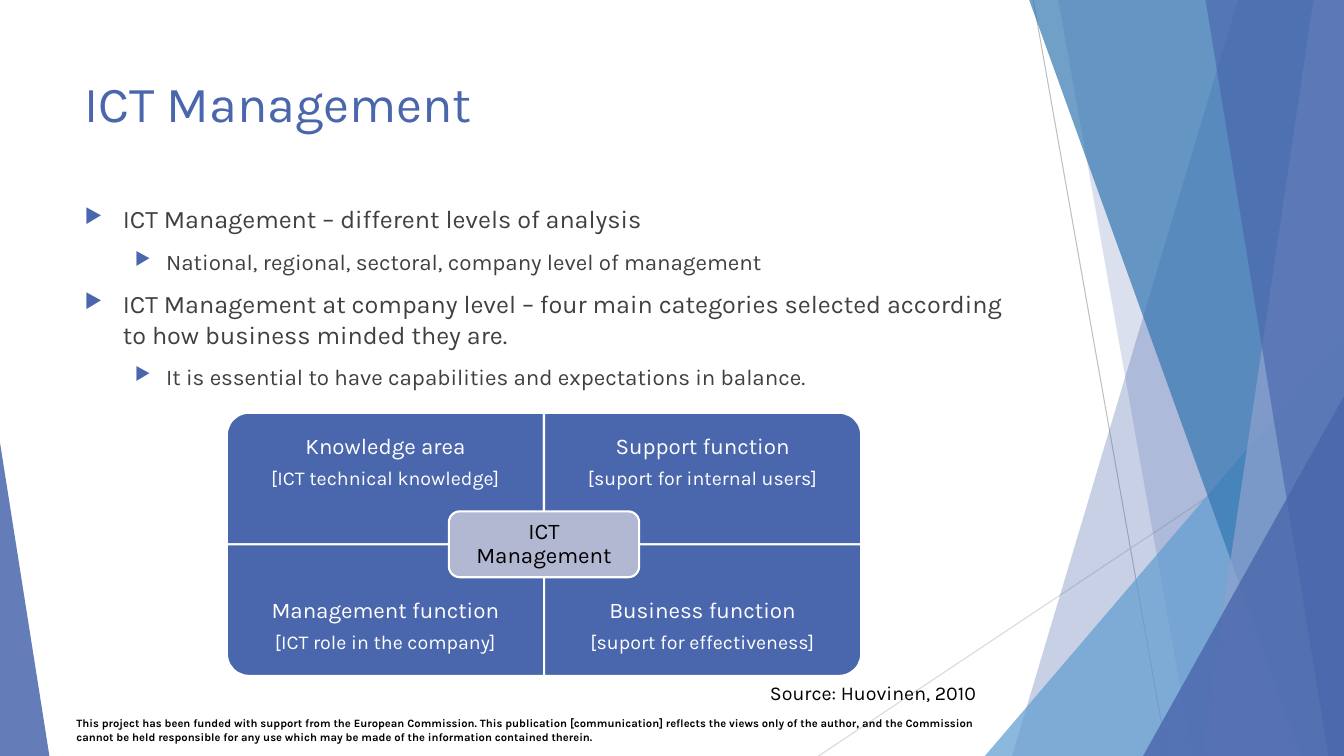
from lxml import etree
from pptx import Presentation
from pptx.dml.color import RGBColor
from pptx.enum.shapes import MSO_CONNECTOR, MSO_SHAPE
from pptx.enum.text import MSO_ANCHOR, PP_ALIGN
from pptx.oxml.ns import qn
from pptx.util import Inches, Pt

WIDE, HIGH = Inches(13.333), Inches(7.5)
FONT = "Karla"
LINE = MSO_CONNECTOR.STRAIGHT
WEDGE = MSO_SHAPE.ISOSCELES_TRIANGLE
ROUND = MSO_SHAPE.ROUNDED_RECTANGLE
CORNER = MSO_SHAPE.ROUND_1_RECTANGLE
TOP, MIDDLE = MSO_ANCHOR.TOP, MSO_ANCHOR.MIDDLE
LEFT, CENTER = PP_ALIGN.LEFT, PP_ALIGN.CENTER

HUES = {
    "blue": "4A66AC", "sky": "629DD1", "deep": "3477B2", "pale": "90A2CF",
    "hub": "B2B8D2", "white": "FFFFFF", "black": "000000", "text": "404040",
    "gray": "BFBFBF", "mist": "D9D9D9",
}

# Left, top, width and height of a quadrant, in percent of the slide
QUAD_X, QUAD_Y, QUAD_W, QUAD_H = 16.88, 54.6, 23.6, 17.4
LABEL_H = 13.05
QUADS = [  # column, row, turn, name, detail
    (0, 0, 270, "Knowledge area", "[ICT technical knowledge]"),
    (1, 0, 0, "Support function", "[suport for internal users]"),
    (0, 1, 180, "Management function", "[ICT role in the company]"),
    (1, 1, 90, "Business function", "[suport for effectiveness]"),
]
POINTS = [  # level, text
    (0, "ICT Management – different levels of analysis"),
    (1, "National, regional, sectoral, company level of management"),
    (0, "ICT Management at company level – four main categories selected "
        "according to how business minded they are."),
    (1, "It is essential to have capabilities and expectations in balance."),
]
LEVELS = [(18, 0.38, 0.38), (16, 0.81, 0.31)]  # size, margin, hang
NOTE = ("This project has been funded with support from the European "
        "Commission. This publication [communication] reflects the views only "
        "of the author, and the Commission cannot be held responsible for any "
        "use which may be made of the information contained therein.")


def hue(name):
    return RGBColor.from_string(HUES[name])


def across(share):
    return round(WIDE * share / 100)


def down(share):
    return round(HIGH * share / 100)


def place(x, y, w, h):
    return across(x), down(y), across(w), down(h)


def paint(shape, fill, alpha=100, edge=None):
    shape.shadow.inherit = False
    shape.fill.solid()
    shape.fill.fore_color.rgb = hue(fill)
    if alpha < 100:
        color = shape.element.spPr.find(".//" + qn("a:srgbClr"))
        etree.SubElement(color, qn("a:alpha"), val=str(alpha * 1000))
    if edge:
        shape.line.color.rgb = hue(edge)
        shape.line.width = Pt(1.5)
    else:
        shape.line.fill.background()


def rule(slide, start, end, color):
    line = slide.shapes.add_connector(
        LINE, across(start[0]), down(start[1]), across(end[0]), down(end[1]))
    line.line.color.rgb = hue(color)
    line.line.width = Pt(0.75)
    etree.SubElement(line.element.spPr, qn("a:effectLst"))


def slab(slide, top, base, color, alpha):
    """Full-height band from a slanted left side to the slide's right edge."""
    pen = slide.shapes.build_freeform(across(top), 0, scale=1.0)
    pen.add_line_segments([(WIDE, 0), (WIDE, HIGH), (across(base), HIGH)])
    paint(pen.convert_to_shape(), color, alpha)


def wedge(slide, x, y, w, tip, color, alpha):
    """Triangle standing on the slide's bottom; tip is 0 left to 1 right."""
    shape = slide.shapes.add_shape(WEDGE, *place(x, y, w, 100 - y))
    shape.adjustments[0] = tip
    paint(shape, color, alpha)


def bullet(para, margin, hang):
    props = para._p.get_or_add_pPr()
    props.set("marL", str(Inches(margin)))
    props.set("indent", str(-Inches(hang)))
    color = etree.SubElement(props, qn("a:buClr"))
    etree.SubElement(color, qn("a:srgbClr"), val=HUES["blue"])
    etree.SubElement(props, qn("a:buSzPct"), val="80000")
    etree.SubElement(props, qn("a:buChar"), char="▶")


def style(para, text, size=16, color="black", bold=False, align=LEFT,
          before=0, after=0, lead=None):
    para.text = text
    para.alignment = align
    para.space_before, para.space_after = Pt(before), Pt(after)
    if lead:
        para.line_spacing = lead
    font = para.font
    font.name, font.size, font.bold = FONT, Pt(size), bold
    font.color.rgb = hue(color)


def setup(frame, anchor=TOP, pad=None):
    frame.word_wrap = True
    frame.vertical_anchor = anchor
    if pad is not None:
        frame.margin_left = frame.margin_right = Inches(pad)
        frame.margin_top = frame.margin_bottom = Inches(pad)
    return frame


def box(slide, area, **look):
    return setup(slide.shapes.add_textbox(*place(*area)).text_frame, **look)


def label(slide, area, text, **look):
    style(box(slide, area).paragraphs[0], text, **look)


def add(frame, first):
    return frame.paragraphs[0] if first else frame.add_paragraph()


def outline(slide, area):
    frame = box(slide, area)
    for i, (level, text) in enumerate(POINTS):
        size, margin, hang = LEVELS[level]
        para = add(frame, i == 0)
        para.level = level
        bullet(para, margin, hang)
        style(para, text, size=size, color="text", before=10 if i else 0)


def quad(slide, col, row, turn, name, detail):
    """Quarter whose rounded corner is turned to face outward."""
    x, y = QUAD_X + col * QUAD_W, QUAD_Y + row * QUAD_H
    left, top, w, h = place(x, y, QUAD_W, QUAD_H)
    if turn % 180:
        left, top, w, h = left + (w - h) // 2, top + (h - w) // 2, h, w
    shape = slide.shapes.add_shape(CORNER, left, top, w, h)
    shape.rotation = turn
    paint(shape, "blue", edge="white")
    y += row * (QUAD_H - LABEL_H)
    frame = box(slide, (x, y, QUAD_W, LABEL_H), anchor=MIDDLE, pad=0.12)
    for i, (text, size) in enumerate([(name, 16), (detail, 14)]):
        style(add(frame, i == 0), text, size=size, color="white",
              align=CENTER, after=6.5, lead=0.9)


def hub(slide, w, h, text):
    area = QUAD_X + QUAD_W - w / 2, QUAD_Y + QUAD_H - h / 2, w, h
    shape = slide.shapes.add_shape(ROUND, *place(*area))
    paint(shape, "hub", edge="white")
    frame = setup(shape.text_frame, anchor=MIDDLE, pad=0.07)
    style(frame.paragraphs[0], text, align=CENTER, lead=0.9)


def decor(slide):
    rule(slide, (76.88, 0), (86.85, 100), "gray")
    rule(slide, (100, 53.73), (60.9, 100), "mist")
    slab(slide, 92.1, 75.3, "blue", 30)
    slab(slide, 78.75, 88.73, "blue", 20)
    wedge(slide, 73.28, 44.4, 26.72, 1, "sky", 72)
    slab(slide, 76.58, 96.83, "deep", 70)
    slab(slide, 97.73, 89.4, "pale", 70)
    slab(slide, 89.7, 98.85, "blue", 65)
    wedge(slide, 85.05, 52.4, 14.95, 1, "blue", 80)
    wedge(slide, 0, 58.53, 3.68, 0, "blue", 85)


def main():
    deck = Presentation()
    deck.slide_width, deck.slide_height = WIDE, HIGH
    slide = deck.slides.add_slide(deck.slide_layouts[6])
    decor(slide)
    label(slide, (4.95, 94.13, 70.95, 4.93), NOTE, size=8, bold=True)
    label(slide, (5.55, 8.93, 70.5, 19.2), "ICT Management", size=36, color="blue")
    outline(slide, (5.55, 26.27, 70.5, 56.53))
    for item in QUADS:
        quad(slide, *item)
    hub(slide, 14.16, 8.72, "ICT Management")
    label(slide, (56.55, 89.47, 22.13, 4.53), "Source: Huovinen, 2010", size=14)
    deck.save("out.pptx")


if __name__ == "__main__":
    main()
